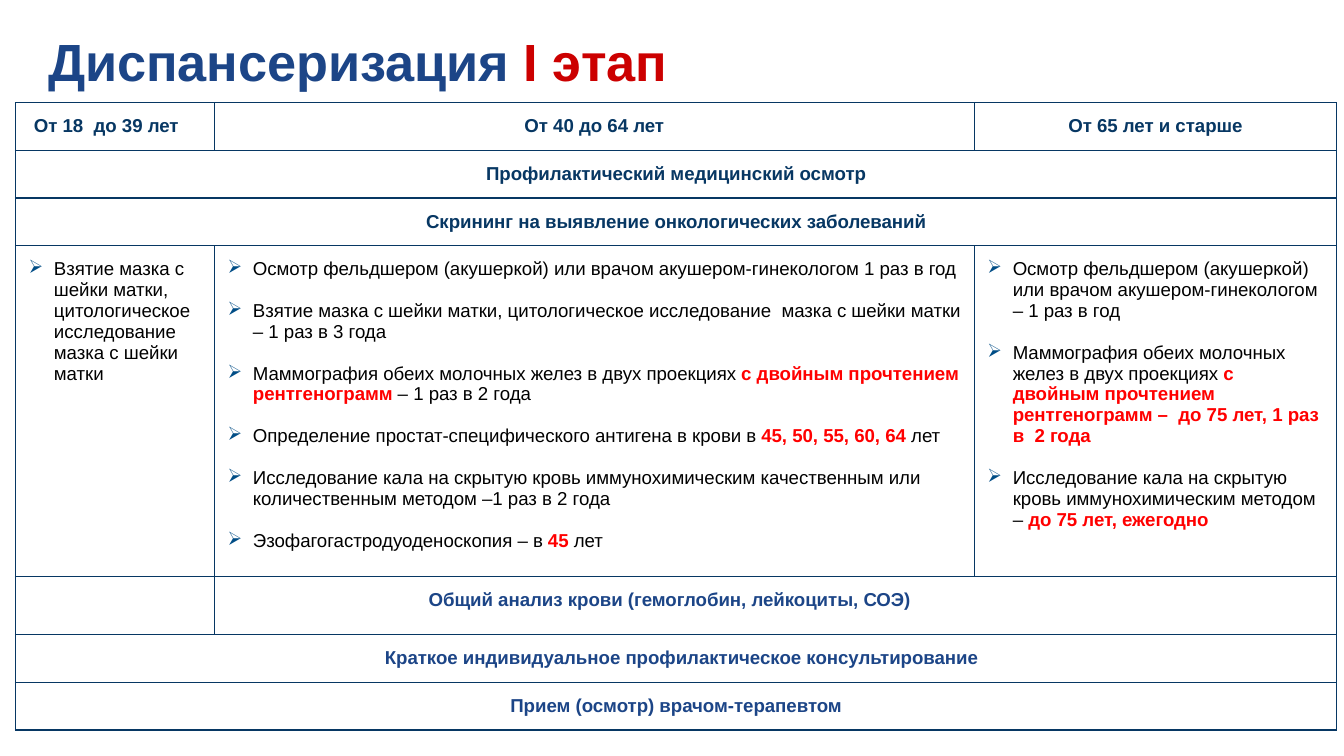
import pptx
import pptx.util
import pptx.dml.color
import pptx.enum.text
import pptx.oxml
import pptx.oxml.ns
from pptx.util import Cm, Pt

COLORS = {"white": "FFFFFF", "navy": "073763", "blue": "1C4587", "crimson": "CC0000",
          "red": "FF0000", "black": "000000", "bullet": "004D86"}
FONT = "Arial"
CENTER = pptx.enum.text.PP_ALIGN.CENTER
LEFT = pptx.enum.text.PP_ALIGN.LEFT

# Content: a run is (text, color, bold)
TITLE = [("Диспансеризация ", "blue", True), ("I этап", "crimson", True)]


def plain(text):
    return (text, "black", False)


def accent(text):
    return (text, "red", True)


SCREENING = [
    [[plain("Взятие мазка с шейки матки, цитологическое исследование мазка с шейки матки")]],
    [
        [plain("Осмотр фельдшером (акушеркой) или врачом акушером-гинекологом 1 раз в год")],
        [plain("Взятие мазка с шейки матки, цитологическое исследование  мазка с шейки матки "
               "– 1 раз в 3 года")],
        [plain("Маммография обеих молочных желез в двух проекциях "),
         accent("с двойным прочтением рентгенограмм "), plain("– 1 раз в 2 года")],
        [plain("Определение простат-специфического антигена в крови в "),
         accent("45, 50, 55, 60, 64 "), plain("лет")],
        [plain("Исследование кала на скрытую кровь иммунохимическим качественным или "
               "количественным методом –1 раз в 2 года")],
        [plain("Эзофагогастродуоденоскопия – в "), accent("45"), plain(" лет")],
    ],
    [
        [plain("Осмотр фельдшером (акушеркой) или врачом акушером-гинекологом – 1 раз в год")],
        [plain("Маммография обеих молочных желез в двух проекциях "),
         accent("с двойным прочтением рентгенограмм –  до 75 лет, 1 раз в  2 года")],
        [plain("Исследование кала на скрытую кровь иммунохимическим методом – "),
         accent("до 75 лет, ежегодно")],
    ],
]
# Headings: row, first column, last column, text, color, alignment, indent in cm
HEADINGS = [
    (0, 0, 0, "От 18  до 39 лет", "navy", LEFT, 0.1),
    (0, 1, 1, "От 40 до 64 лет", "navy", CENTER, 0),
    (0, 2, 2, "От 65 лет и старше", "navy", CENTER, 0),
    (1, 0, 2, "Профилактический медицинский осмотр", "navy", CENTER, 0),
    (2, 0, 2, "Скрининг на выявление онкологических заболеваний", "navy", CENTER, 0),
    (4, 1, 2, "Общий анализ крови (гемоглобин, лейкоциты, СОЭ)", "blue", LEFT, 3.8),
    (5, 0, 2, "Краткое индивидуальное профилактическое консультирование", "blue", CENTER, 0.2),
    (6, 0, 2, "Прием (осмотр) врачом-терапевтом", "blue", CENTER, 0),
]
SCREENING_ROW = 3
COLUMN_WIDTHS = [3.76, 14.36, 6.85]
ROW_HEIGHTS = [0.9, 0.9, 0.9, 6.25, 1.1, 0.9, 0.9]


def rgb(name):
    return pptx.dml.color.RGBColor.from_string(COLORS[name])


def xml(text):
    namespace = pptx.oxml.ns.nsdecls("a")
    return pptx.oxml.parse_xml(text.replace(" NS", " " + namespace, 1))


def add_runs(paragraph, runs, size):
    for text, color, bold in runs:
        run = paragraph.add_run()
        run.text = text
        run.font.name = FONT
        run.font.size = Pt(size)
        run.font.bold = bold
        run.font.color.rgb = rgb(color)


def indent(paragraph, left, first=0):
    properties = paragraph._p.get_or_add_pPr()
    properties.set("marL", str(Cm(left)))
    properties.set("indent", str(Cm(first)))
    return properties


def format_cell(cell):
    cell.margin_left = cell.margin_right = Cm(0.25)
    cell.margin_top = cell.margin_bottom = Cm(0.25)
    cell.fill.solid()
    cell.fill.fore_color.rgb = rgb("white")
    properties = cell._tc.get_or_add_tcPr()
    for position, side in enumerate(("lnL", "lnR", "lnT", "lnB")):
        properties.insert(position, xml(
            f'<a:{side} NS w="{Pt(0.75)}"><a:solidFill><a:srgbClr val="{COLORS["navy"]}"/>'
            f'</a:solidFill></a:{side}>'))
    # Keeps empty cells from stretching their row
    cell.text_frame.paragraphs[0]._p.append(xml('<a:endParaRPr NS sz="1000"/>'))


def add_bullets(cell, items):
    frame = cell.text_frame
    for number, runs in enumerate(items):
        paragraph = frame.add_paragraph() if number else frame.paragraphs[0]
        if number:
            paragraph.space_before = Pt(11.2)
        properties = indent(paragraph, 0.48, -0.48)
        properties.append(xml(f'<a:buClr NS><a:srgbClr val="{COLORS["bullet"]}"/></a:buClr>'))
        properties.append(xml('<a:buChar NS char="➢"/>'))
        add_runs(paragraph, runs, 10)


presentation = pptx.Presentation()
presentation.slide_width = Cm(25.4)
presentation.slide_height = Cm(14.28)
slide = presentation.slides.add_slide(presentation.slide_layouts[5])

# Title
title = slide.shapes.title
title.left, title.top, title.width, title.height = Cm(0.66), Cm(0.2), Cm(23.67), Cm(1.6)
title.line.color.rgb = rgb("white")
title.line.width = Pt(0.75)
frame = title.text_frame
frame.auto_size = pptx.enum.text.MSO_AUTO_SIZE.NONE
frame.vertical_anchor = pptx.enum.text.MSO_ANCHOR.TOP
frame.margin_left = frame.margin_right = Cm(0.25)
frame.margin_top, frame.margin_bottom = Cm(0.36), Cm(0)
frame.paragraphs[0].alignment = LEFT
add_runs(frame.paragraphs[0], TITLE, 28)

# Table grid
table = slide.shapes.add_table(
    len(ROW_HEIGHTS), len(COLUMN_WIDTHS), Cm(0.29), Cm(1.94),
    Cm(sum(COLUMN_WIDTHS)), Cm(sum(ROW_HEIGHTS))).table
table.first_row = table.horz_banding = False
for column, width in zip(table.columns, COLUMN_WIDTHS):
    column.width = Cm(width)
for row, height in zip(table.rows, ROW_HEIGHTS):
    row.height = Cm(height)
for cell in table.iter_cells():
    format_cell(cell)

# Headings, merged across the columns they cover
for row, first, last, text, color, alignment, left in HEADINGS:
    cell = table.cell(row, first)
    if last > first:
        cell.merge(table.cell(row, last))
    paragraph = cell.text_frame.paragraphs[0]
    paragraph.alignment = alignment
    indent(paragraph, left)
    add_runs(paragraph, [(text, color, True)], 10)

# Screening lists by age group
for column, items in enumerate(SCREENING):
    add_bullets(table.cell(SCREENING_ROW, column), items)

presentation.save("out.pptx")
